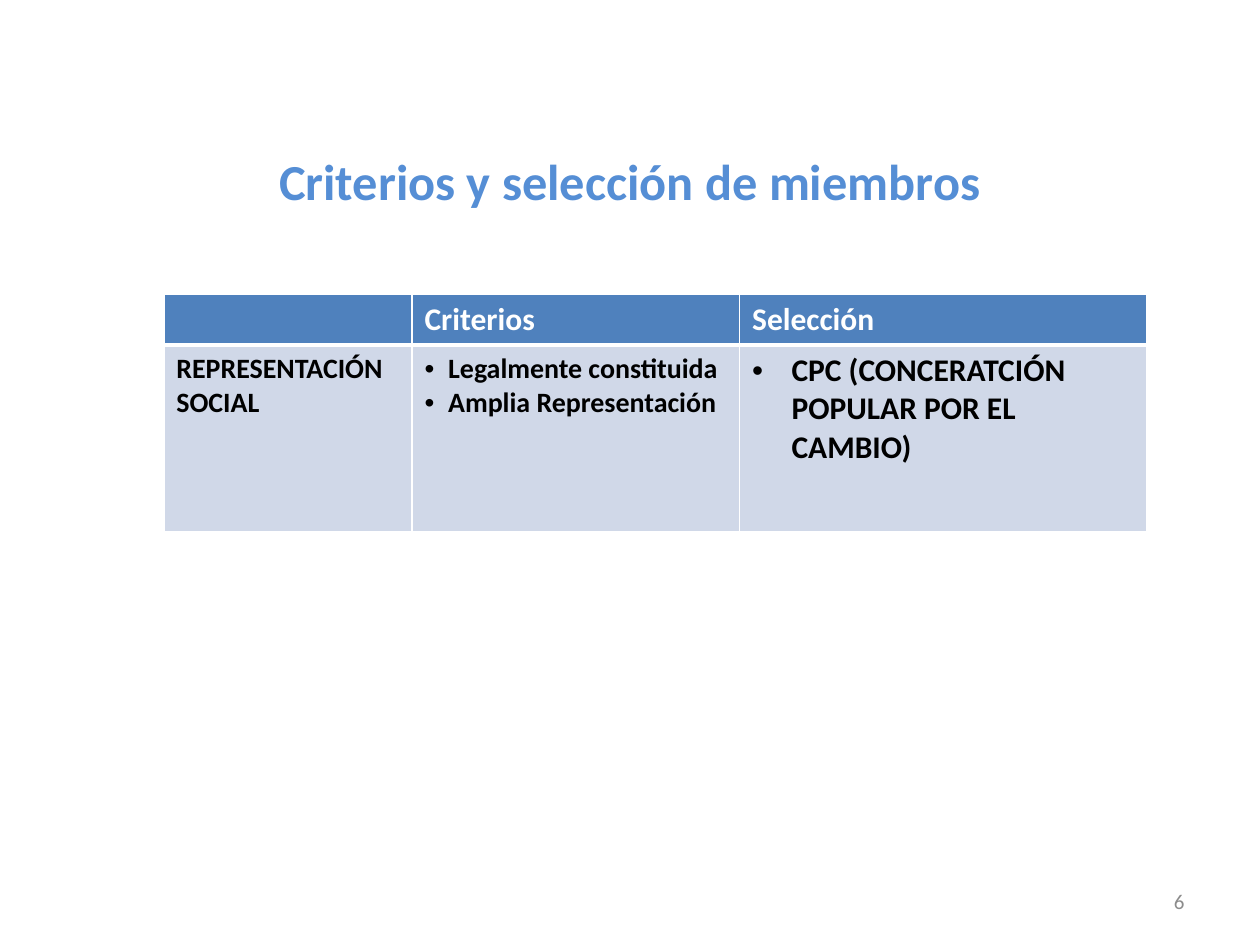
import pptx
import pptx.util
import pptx.dml.color
import pptx.enum.text
import pptx.oxml
import pptx.oxml.ns

Pt = pptx.util.Pt
ALIGN = pptx.enum.text.PP_ALIGN
ANCHOR = pptx.enum.text.MSO_ANCHOR
FONT = "Calibri"
WHITE, BLACK = "FFFFFF", "000000"
HEADER_FILL, BODY_FILL = "4F81BD", "D0D8E8"

HEADERS = ["", "Criterios", "Selección"]
BODY = [
    (["REPRESENTACIÓN SOCIAL"], 16, 0),
    (["Legalmente constituida", "Amplia Representación"], 16, 13.5),
    (["CPC (CONCERATCIÓN POPULAR POR EL CAMBIO)"], 18, 22.5),
]


def rgb(value):
    return pptx.dml.color.RGBColor.from_string(value)


def add_run(p, text, size, color, bold=False):
    r = p.add_run()
    r.text = text
    r.font.name = FONT
    r.font.size = Pt(size)
    r.font.bold = bold
    r.font.color.rgb = rgb(color)


def add_xml(parent, xml, index):
    ns = pptx.oxml.ns.nsdecls("a")
    parent.insert(index, pptx.oxml.parse_xml(xml.replace(" ", f" {ns} ", 1)))


def set_bullet(p, indent):
    pPr = p._p.get_or_add_pPr()
    pPr.set("marL", str(Pt(indent)))
    pPr.set("indent", str(-Pt(indent)))
    add_xml(pPr, '<a:buFont typeface="Arial"/>', 0)
    add_xml(pPr, '<a:buChar char="•"/>', 1)


def style_cell(cell, fill, top, bottom):
    cell.fill.solid()
    cell.fill.fore_color.rgb = rgb(fill)
    tcPr = cell._tc.get_or_add_tcPr()
    for i, (side, width) in enumerate(zip("LRTB", (1, 1, top, bottom))):
        add_xml(tcPr, f'<a:ln{side} w="{Pt(width)}"><a:solidFill>'
                      f'<a:srgbClr val="{WHITE}"/></a:solidFill></a:ln{side}>', i)


def place_title(slide, text, left, top, width, height):
    sp = slide.shapes.title
    sp.left, sp.top, sp.width, sp.height = Pt(left), Pt(top), Pt(width), Pt(height)
    tf = sp.text_frame
    tf.auto_size = pptx.enum.text.MSO_AUTO_SIZE.NONE
    tf.vertical_anchor = ANCHOR.TOP
    tf.margin_top, tf.margin_bottom = Pt(64), Pt(0)
    p = tf.paragraphs[0]
    p.alignment = ALIGN.CENTER
    add_run(p, text, 28.8, "558ED5", True)


def place_table(slide, left, top, width, height):
    shape = slide.shapes.add_table(2, 3, Pt(left), Pt(top), Pt(width), Pt(height))
    table = shape.table
    for col, share in zip(table.columns, (1.97, 2.6, 3.23)):
        col.width = Pt(width * share / 7.8)
    header_height = 29
    table.rows[0].height = Pt(header_height)
    table.rows[1].height = Pt(height - header_height)
    for i, (header, (lines, size, indent)) in enumerate(zip(HEADERS, BODY)):
        cell = table.cell(0, i)
        style_cell(cell, HEADER_FILL, 1, 3)
        if header:
            add_run(cell.text_frame.paragraphs[0], header, 18, WHITE, True)
        cell = table.cell(1, i)
        style_cell(cell, BODY_FILL, 3, 1)
        tf = cell.text_frame
        for n, line in enumerate(lines):
            p = tf.add_paragraph() if n else tf.paragraphs[0]
            if indent:
                set_bullet(p, indent)
            add_run(p, line, size, BLACK, True)


def place_number(slide, text, left, top, width, height):
    sp = slide.shapes.add_textbox(Pt(left), Pt(top), Pt(width), Pt(height))
    tf = sp.text_frame
    tf.word_wrap = True
    tf.vertical_anchor = ANCHOR.MIDDLE
    p = tf.paragraphs[0]
    p.alignment = ALIGN.RIGHT
    add_run(p, text, 12, "8C8C8C")


def main():
    prs = pptx.Presentation()
    prs.slide_width, prs.slide_height = Pt(720), Pt(540)
    slide = prs.slides.add_slide(prs.slide_layouts[5])
    place_title(slide, "Criterios y selección de miembros", 36, 21.6, 648, 90)
    place_table(slide, 93.6, 168, 561.6, 135.5)
    place_number(slide, "6", 516, 500.5, 168, 28.75)
    prs.save("out.pptx")


if __name__ == "__main__":
    main()
